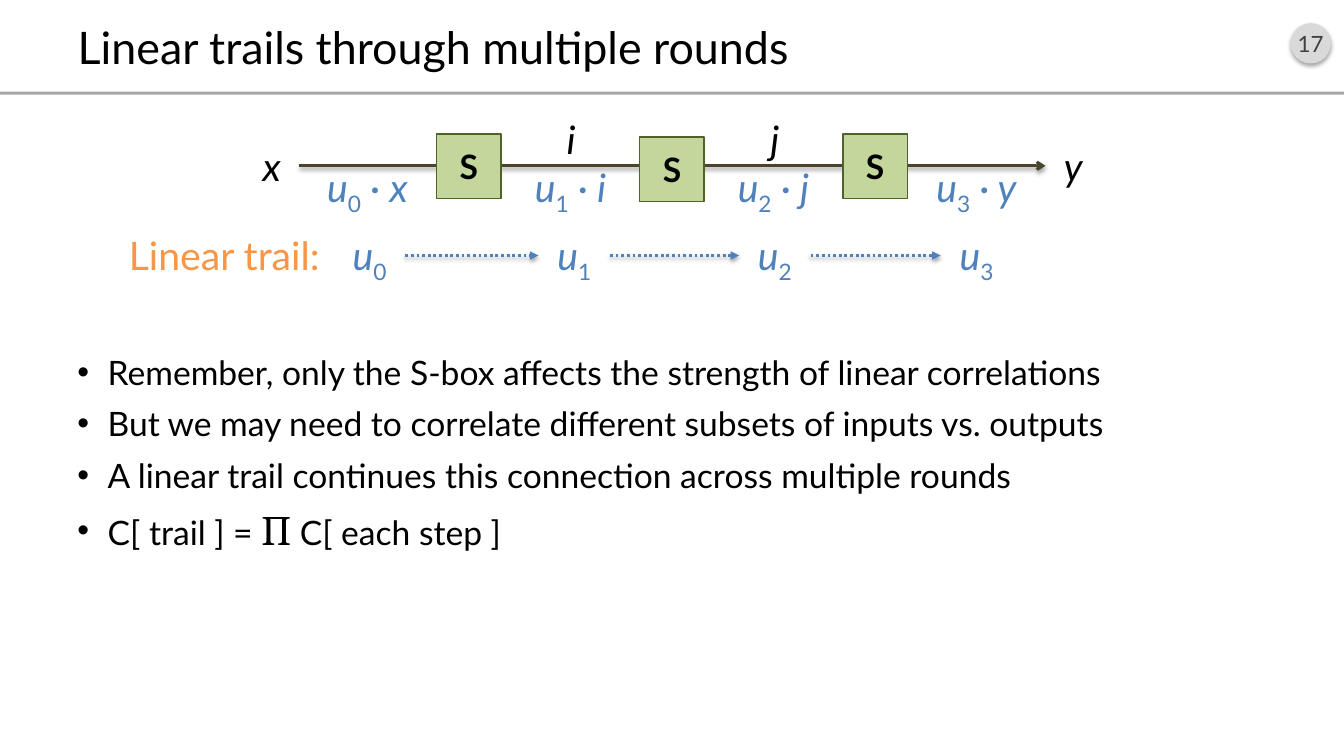
import pptx
import pptx.util
import pptx.dml.color
import pptx.enum.dml
import pptx.enum.shapes
import pptx.enum.text
from lxml import etree

Inches, Pt = pptx.util.Inches, pptx.util.Pt
RGBColor = pptx.dml.color.RGBColor
MSO_SHAPE = pptx.enum.shapes.MSO_SHAPE
PP_ALIGN = pptx.enum.text.PP_ALIGN
MIDDLE = pptx.enum.text.MSO_ANCHOR.MIDDLE
qn = pptx.oxml.ns.qn

BLACK = RGBColor(0x00, 0x00, 0x00)
BLUE = RGBColor(0x4F, 0x81, 0xBD)
ORANGE = RGBColor(0xF7, 0x96, 0x46)
BROWN = RGBColor(0x4A, 0x45, 0x2A)
GREEN = RGBColor(0xC3, 0xD6, 0x9B)
DARK_GREEN = RGBColor(0x4F, 0x62, 0x28)
BADGE_GRAY = RGBColor(0xD9, 0xD9, 0xD9)
RULE_GRAY = RGBColor(0xA6, 0xA6, 0xA6)
NUMBER_GRAY = RGBColor(0x40, 0x40, 0x40)


def write(frame, runs, size, color, align=PP_ALIGN.CENTER, side_margin=0):
    frame.word_wrap = True
    frame.margin_left = frame.margin_right = Inches(side_margin)
    paragraph = frame.paragraphs[0]
    paragraph.alignment = align
    for text, style in runs:
        run = paragraph.add_run()
        run.text = text
        run.font.name = "Lato"
        run.font.size = Pt(size)
        run.font.color.rgb = color
        run.font.italic = style == "italic"
        run.font.bold = style == "bold"
        if style == "subscript":
            run.font._element.set("baseline", "-25000")


def cast_shadow(part, opacity, distance):
    effects = etree.SubElement(part._element.spPr, qn("a:effectLst"))
    shadow = etree.SubElement(effects, qn("a:outerShdw"), blurRad=str(Pt(3.1)),
                              dist=str(Pt(distance)), dir="5400000", rotWithShape="0")
    tint = etree.SubElement(shadow, qn("a:srgbClr"), val="000000")
    etree.SubElement(tint, qn("a:alpha"), val=str(opacity * 1000))


deck = pptx.Presentation()
deck.slide_width, deck.slide_height = Inches(13.33), Inches(7.5)
slide = deck.slides.add_slide(deck.slide_layouts[5])
shapes = slide.shapes

badge = shapes.add_shape(MSO_SHAPE.OVAL, Inches(12.8), Inches(0.23), Inches(0.4), Inches(0.4))
badge.fill.solid()
badge.fill.fore_color.rgb = BADGE_GRAY
badge.line.fill.background()
cast_shadow(badge, 35, 1.8)
badge.text_frame.vertical_anchor = MIDDLE
write(badge.text_frame, [("17", "")], 16, NUMBER_GRAY)

rule = shapes.add_shape(MSO_SHAPE.RECTANGLE, 0, Inches(0.91), Inches(13.33), Inches(0.03))
rule.shadow.inherit = False
rule.fill.solid()
rule.fill.fore_color.rgb = RULE_GRAY
rule.line.fill.background()

title = shapes.title
title.left, title.top, title.width, title.height = Inches(0.67), Inches(0.16), Inches(12), Inches(0.6)
title.text_frame.vertical_anchor = MIDDLE
write(title.text_frame, [("Linear trails through multiple rounds", "")], 32, BLACK, PP_ALIGN.LEFT, 0.1)

points = [
    [("Remember, only the S-box affects the strength of linear correlations", "Lato", 24)],
    [("But we may need to correlate different subsets of inputs vs. outputs", "Lato", 24)],
    [("A linear trail continues this connection across multiple rounds", "Lato", 24)],
    [("C[ trail ] = ", "Lato", 24), ("Π", "Cambria", 28), (" C[ each step ]", "Lato", 24)],
]
body = shapes.add_textbox(Inches(0.67), Inches(3.44), Inches(12), Inches(3.52)).text_frame
body.word_wrap = True
for index, point in enumerate(points):
    paragraph = body.add_paragraph() if index else body.paragraphs[0]
    paragraph.space_before = Pt(8)
    properties = paragraph._p.get_or_add_pPr()
    properties.set("marL", str(Inches(0.3)))
    properties.set("indent", str(-Inches(0.3)))
    etree.SubElement(properties, qn("a:buFont"), typeface="Arial")
    etree.SubElement(properties, qn("a:buChar"), char="•")
    for text, font, size in point:
        run = paragraph.add_run()
        run.text = text
        run.font.name = font
        run.font.size = Pt(size)
        run.font.color.rgb = BLACK

states = []
for letter, left, top in [("x", 2.42, 1.36), ("y", 10.37, 1.36), ("i", 5.39, 1.09), ("j", 7.41, 1.09)]:
    state = shapes.add_textbox(Inches(left), Inches(top), Inches(0.55), Inches(0.57))
    write(state.text_frame, [(letter, "italic")], 28, BLACK, side_margin=0.1)
    states.append(state)

caption = shapes.add_textbox(Inches(0.2), Inches(2.25), Inches(2.97), Inches(0.57))
write(caption.text_frame, [("Linear trail:", "")], 28, ORANGE, PP_ALIGN.RIGHT)

masks = []
for step, (left, letter) in enumerate(zip([3.31, 5.34, 7.33, 9.33], "xijy")):
    symbol = [("u", "italic"), (str(step), "subscript")]
    mask = shapes.add_textbox(Inches(left), Inches(2.25), Inches(0.71), Inches(0.57))
    write(mask.text_frame, symbol, 28, BLUE)
    masks.append(mask)
    product = shapes.add_textbox(Inches(2.96 + 2.013 * step), Inches(1.57), Inches(1.37), Inches(0.57))
    write(product.text_frame, symbol + [(f" · {letter}", "italic")], 28, BLUE)

links = [(states[0], states[1], BROWN, "arrow")]
links += [(start, end, BLUE, "triangle") for start, end in zip(masks, masks[1:])]
for start, end, color, head in links:
    arrow = shapes.add_connector(pptx.enum.shapes.MSO_CONNECTOR.STRAIGHT, 0, 0, 0, 0)
    arrow.begin_connect(start, 3)
    arrow.end_connect(end, 1)
    arrow.line.color.rgb = color
    arrow.line.width = Pt(2)
    if head == "triangle":
        arrow.line.dash_style = pptx.enum.dml.MSO_LINE.ROUND_DOT
    etree.SubElement(arrow.line._get_or_add_ln(), qn("a:tailEnd"), type=head)
    cast_shadow(arrow, 38, 1.6)

for step, top in enumerate([1.33, 1.36, 1.33]):
    sbox = shapes.add_shape(MSO_SHAPE.RECTANGLE, Inches(4.33 + 2.015 * step), Inches(top),
                            Inches(0.64), Inches(0.64))
    sbox.shadow.inherit = False
    sbox.fill.solid()
    sbox.fill.fore_color.rgb = GREEN
    sbox.line.color.rgb = DARK_GREEN
    sbox.line.width = Pt(1)
    sbox.text_frame.vertical_anchor = MIDDLE
    sbox.text_frame.margin_top = sbox.text_frame.margin_bottom = 0
    write(sbox.text_frame, [("S", "bold")], 24, BLACK)

deck.save("out.pptx")
